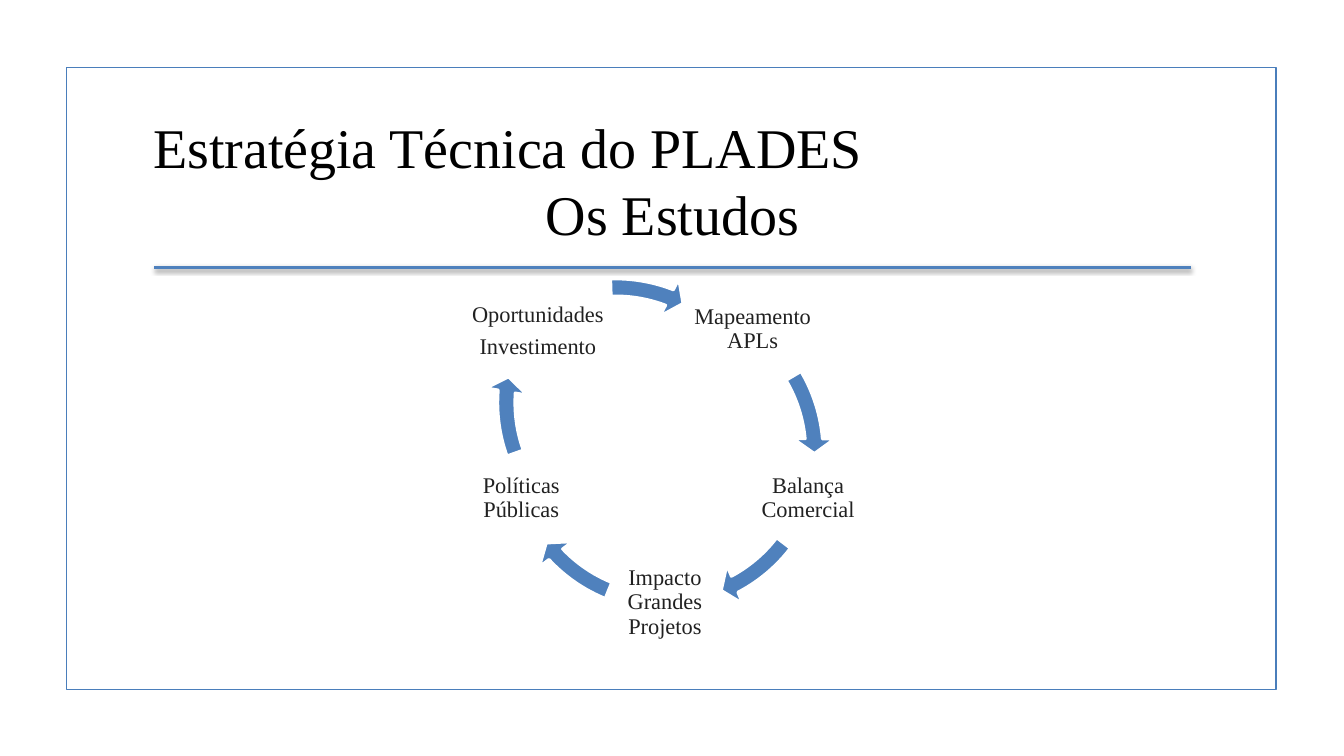
import lxml.etree
import pptx
import pptx.dml.color
import pptx.enum.shapes
import pptx.enum.text
import pptx.oxml.ns
import pptx.util

PIXEL = 9144
CENTER = pptx.enum.text.PP_ALIGN.CENTER
LEFT = pptx.enum.text.PP_ALIGN.LEFT


def pixels(*lengths):
    return [pptx.util.Emu(length * PIXEL) for length in lengths]


def color(value):
    return pptx.dml.color.RGBColor.from_string(value)


class CycleSlide:
    font = "Times New Roman"
    accent = "4F81BD"
    frame_color = "4A7EBB"
    title_color = "000000"
    label_color = "212121"

    def __init__(self, presentation):
        self.slide = presentation.slides.add_slide(presentation.slide_layouts[5])
        self.shapes = self.slide.shapes

    def set_text(self, frame, lines, size, text_color, alignments, margins):
        frame.word_wrap = True
        frame.auto_size = pptx.enum.text.MSO_AUTO_SIZE.NONE
        frame.vertical_anchor = pptx.enum.text.MSO_ANCHOR.MIDDLE
        horizontal, vertical = pixels(*margins)
        frame.margin_left = frame.margin_right = horizontal
        frame.margin_top = frame.margin_bottom = vertical
        frame.text = "\n".join(lines)
        for paragraph, alignment in zip(frame.paragraphs, alignments):
            paragraph.alignment = alignment
            paragraph.font.name = self.font
            paragraph.font.size = pptx.util.Pt(size)
            paragraph.font.color.rgb = color(text_color)

    def title(self, box, lines, alignments):
        shape = self.shapes.title
        shape.left, shape.top, shape.width, shape.height = pixels(*box)
        self.set_text(shape.text_frame, lines, 40, self.title_color,
                      alignments, (10, 5))

    def frame(self, box):
        shape = self.shapes.add_shape(
            pptx.enum.shapes.MSO_SHAPE.RECTANGLE, *pixels(*box))
        shape.shadow.inherit = False
        shape.fill.background()
        shape.line.color.rgb = color(self.frame_color)
        shape.line.width = pptx.util.Pt(1.25)

    def rule(self, start, end):
        line = self.shapes.add_connector(
            pptx.enum.shapes.MSO_CONNECTOR.STRAIGHT, *pixels(*start, *end))
        line.line.color.rgb = color(self.accent)
        line.line.width = pptx.util.Pt(2)
        name = pptx.oxml.ns.qn
        effects = lxml.etree.SubElement(
            line._element.spPr, name("a:effectLst"))
        shadow = lxml.etree.SubElement(
            effects, name("a:outerShdw"), blurRad="40000", dist="20000",
            dir="5400000", rotWithShape="0")
        black = lxml.etree.SubElement(shadow, name("a:srgbClr"), val="000000")
        lxml.etree.SubElement(black, name("a:alpha"), val="38000")

    def label(self, box, lines):
        shape = self.shapes.add_textbox(*pixels(*box))
        self.set_text(shape.text_frame, lines, 16, self.label_color,
                      [CENTER] * len(lines), (2, 2))
        for paragraph in shape.text_frame.paragraphs:
            paragraph.line_spacing = 0.9
            paragraph.space_after = pptx.util.Pt(5.6)

    def arrow(self, left, top, tip, tail):
        shape = self.shapes.add_shape(
            pptx.enum.shapes.MSO_SHAPE.CIRCULAR_ARROW,
            *pixels(left, top, 337, 337))
        shape.shadow.inherit = False
        shape.fill.solid()
        shape.fill.fore_color.rgb = color(self.accent)
        shape.line.color.rgb = color("FFFFFF")
        shape.line.width = pptx.util.Pt(2)
        degree = 0.6
        values = (0.05, 5.59 * degree, tip * degree, tail * degree, 0.06)
        for index, value in enumerate(values):
            shape.adjustments[index] = value


def main():
    presentation = pptx.Presentation()
    presentation.slide_width, presentation.slide_height = pixels(1333, 750)
    cycle = CycleSlide(presentation)
    cycle.frame((66, 67, 1200, 617))
    cycle.rule((153, 265), (1181, 265))
    cycle.title((142, 107, 1050, 143),
                ["Estratégia Técnica do PLADES", "Os Estudos"], [LEFT, CENTER])
    stages = [
        ((677, 282, 139, 90), ["Mapeamento APLs"], (491, 280, 354.93, 329.41)),
        ((742, 449, 119, 90), ["Balança Comercial"], (491, 280, 62.22, 37.52)),
        ((603, 553, 113, 90), ["Impacto Grandes Projetos"],
         (491, 280, 136.89, 112.19)),
        ((472, 449, 90, 90), ["Políticas Públicas"], (482, 231, 184.29, 160.32)),
        ((455, 284, 157, 90), ["Oportunidades", "Investimento"],
         (442, 265, 291.2, 268.26)),
    ]
    for box, lines, arrow in stages:
        cycle.label(box, lines)
        cycle.arrow(*arrow)
    presentation.save("out.pptx")


if __name__ == "__main__":
    main()
